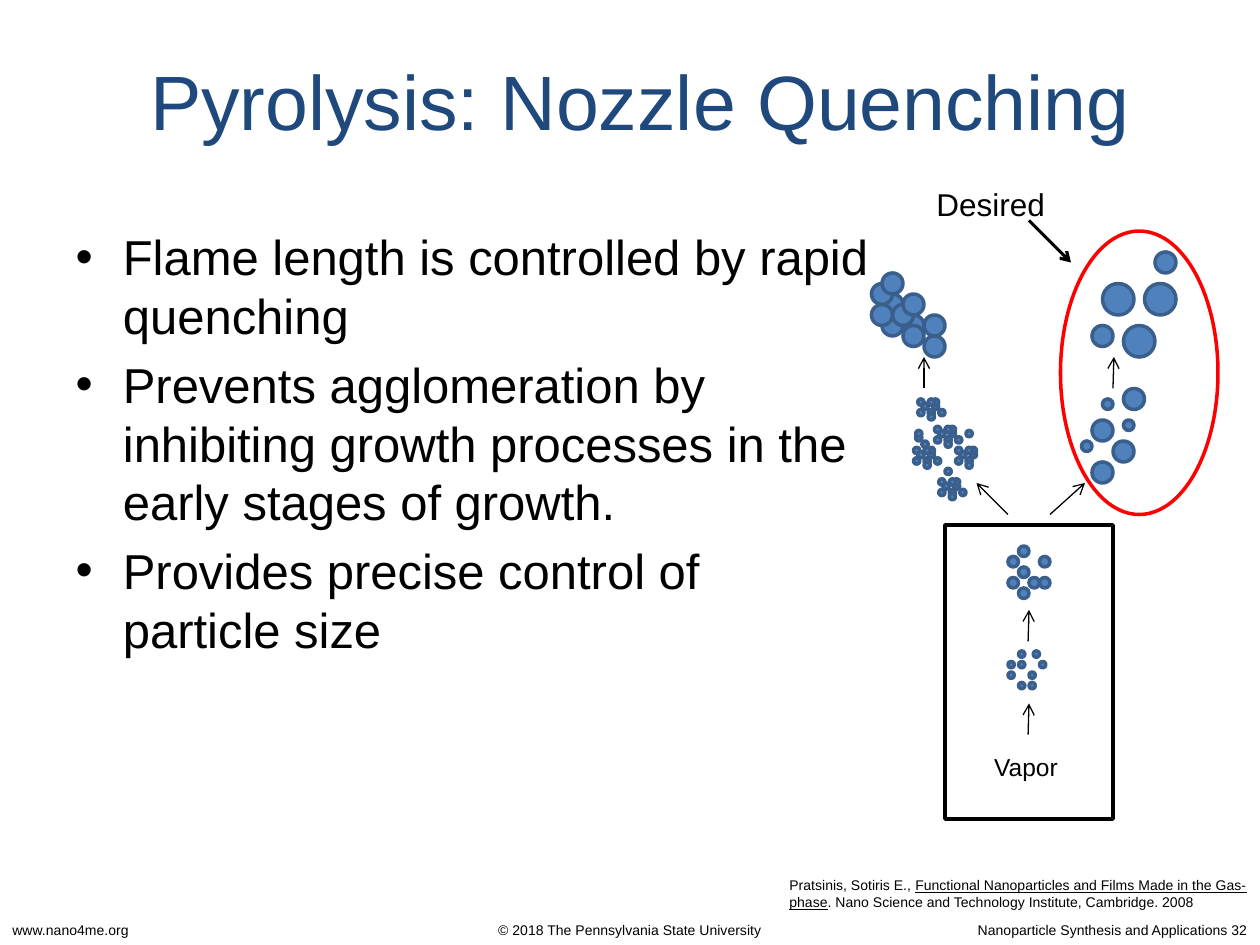
"""Build the slide on nozzle quenching in pyrolysis."""
import lxml.etree
import pptx
import pptx.dml.color
import pptx.enum.shapes
import pptx.enum.text
import pptx.oxml.ns
import pptx.util

Pt = pptx.util.Pt
ALIGN = pptx.enum.text.PP_ALIGN
SHAPE = pptx.enum.shapes.MSO_SHAPE
FONT = "Arial"
COLORS = {"title": "1F497D", "text": "000000", "particle": "4F81BD",
          "particle_edge": "3A5F8C", "desired": "FF0000"}

TITLE = "Pyrolysis: Nozzle Quenching"
BULLETS = [
    "Flame length is controlled by rapid quenching",
    "Prevents agglomeration by inhibiting growth processes in the early stages of growth.",
    "Provides precise control of particle size",
]
FOOTERS = [
    ("www.nano4me.org", ALIGN.LEFT),
    ("© 2018 The Pennsylvania State University", ALIGN.CENTER),
    ("Nanoparticle Synthesis and Applications 32", ALIGN.RIGHT),
]
CITATION = [
    ("Pratsinis, Sotiris E., ", False),
    ("Functional Nanoparticles and Films Made in the Gas-phase", True),
    (". Nano Science and Technology Institute, Cambridge. 2008", False),
]

GRID = 6
NUCLEUS, SMALL, MEDIUM, LARGE = 3.6, 6, 12, 18
GRID_PARTICLES = [
    (NUCLEUS, [(96, 64), (98, 64), (97, 65), (97, 62), (98.4, 62), (98, 65),
               (96, 63), (99, 63), (97, 63)]),
    (SMALL, [(97, 52), (96, 55), (99, 53), (97, 56), (99, 55), (96, 53),
             (97, 54), (98, 55), (105, 38), (107, 40), (103, 42)]),
    (MEDIUM, [(104, 44), (106, 42), (107, 37), (104, 40), (104, 31), (110, 24)]),
    (MEDIUM, [(84, 28), (86, 30), (86, 31), (84, 30), (85, 29), (86, 28),
              (88, 30), (83, 27), (83, 29), (88, 32), (84, 26)]),
    (LARGE, [(109, 27), (107, 31), (105, 27)]),
]
CLUSTER = [(8.4, 2.4), (6, 6), (2.4, 2.4), (0, 0), (8.4, 0), (6, 8.4), (0, 6), (6, 0)]
CLUSTER_TAIL = (12, 6)
CLUSTER_ORIGINS = [
    (536.4, 273.6, True), (546, 255.6, False), (522, 255.6, True),
    (534, 243.6, True), (524.4, 228, True),
]
LOOSE_NUCLEI = [(552, 246), (540, 267.6), (523.2, 248.4), (523.2, 246), (526.8, 252)]

ARROWS = [
    (587.5, 366.5, 588, 348.5, 0.75), (587.5, 419.75, 588, 402, 0.75),
    (576, 294, 558, 276, 0.75), (600, 294, 620, 276, 0.75),
    (528, 222, 528, 204, 0.75), (636, 222, 636.5, 204, 0.75),
    (588, 126, 612, 150, 1.75),
]


def color(name):
    return pptx.dml.color.RGBColor.from_string(COLORS[name])


def style_font(font, size, name="text"):
    font.name, font.size = FONT, Pt(size)
    font.color.rgb = color(name)


def place(shape, left, top, width, height):
    shape.left, shape.top = Pt(left), Pt(top)
    shape.width, shape.height = Pt(width), Pt(height)


def add_text(slide, box, runs, size, alignment=ALIGN.LEFT, wrap=True):
    shape = slide.shapes.add_textbox(*map(Pt, box))
    shape.text_frame.word_wrap = wrap
    shape.text_frame.auto_size = pptx.enum.text.MSO_AUTO_SIZE.SHAPE_TO_FIT_TEXT
    paragraph = shape.text_frame.paragraphs[0]
    paragraph.alignment = alignment
    style_font(paragraph.font, size)
    for text, underlined in runs:
        run = paragraph.add_run()
        run.text = text
        if underlined:
            run.font.underline = True


def add_outline(slide, kind, box, line, fill=None):
    shape = slide.shapes.add_shape(kind, *map(Pt, box))
    shape.shadow.inherit = False
    if fill:
        shape.fill.solid()
        shape.fill.fore_color.rgb = color(fill)
    else:
        shape.fill.background()
    shape.line.color.rgb = color(line)
    shape.line.width = Pt(2)


def add_particle(slide, left, top, diameter):
    add_outline(slide, SHAPE.OVAL, (left, top, diameter, diameter),
                "particle_edge", "particle")


def add_arrow(slide, start_x, start_y, end_x, end_y, width):
    connector = slide.shapes.add_connector(
        pptx.enum.shapes.MSO_CONNECTOR.STRAIGHT,
        Pt(start_x), Pt(start_y), Pt(end_x), Pt(end_y))
    connector.line.color.rgb = color("text")
    connector.line.width = Pt(width)
    qn = pptx.oxml.ns.qn
    lxml.etree.SubElement(connector.line._get_or_add_ln(), qn("a:tailEnd"), type="arrow")
    lxml.etree.SubElement(connector._element.spPr, qn("a:effectLst"))


def add_placeholders(slide):
    title = slide.shapes.title
    place(title, 42, 12, 648, 90)
    title.text_frame.text = TITLE
    style_font(title.text_frame.paragraphs[0].font, 44, "title")
    body = slide.placeholders[1]
    place(body, 36, 126, 468, 356.4)
    body.text_frame.text = "\n".join(BULLETS)
    body.text_frame.auto_size = pptx.enum.text.MSO_AUTO_SIZE.NONE
    for paragraph in body.text_frame.paragraphs:
        style_font(paragraph.font, 28)


def add_particles(slide):
    for diameter, cells in GRID_PARTICLES:
        for column, row in cells:
            add_particle(slide, column * GRID, row * GRID, diameter)
    for left, top, has_tail in CLUSTER_ORIGINS:
        for x, y in CLUSTER + [CLUSTER_TAIL] * has_tail:
            add_particle(slide, left + x, top + y, NUCLEUS)
    for left, top in LOOSE_NUCLEI:
        add_particle(slide, left, top, NUCLEUS)


def main():
    presentation = pptx.Presentation()
    presentation.slide_width, presentation.slide_height = Pt(720), Pt(540)
    slide = presentation.slides.add_slide(presentation.slide_layouts[1])
    add_placeholders(slide)
    for text, alignment in FOOTERS:
        add_text(slide, (0, 523, 720, 17), [(text, False)], 8, alignment)
    add_text(slide, (444, 497.5, 276, 26.5), CITATION, 8)
    add_outline(slide, SHAPE.RECTANGLE, (540, 300, 96, 168), "text")
    add_particles(slide)
    add_outline(slide, SHAPE.OVAL, (606, 132, 90, 162), "desired")
    add_text(slide, (561, 426, 51, 24.5), [("Vapor", False)], 14, wrap=False)
    add_text(slide, (528, 102, 77, 29), [("Desired", False)], 18, wrap=False)
    for arrow in ARROWS:
        add_arrow(slide, *arrow)
    presentation.save("out.pptx")


if __name__ == "__main__":
    main()
